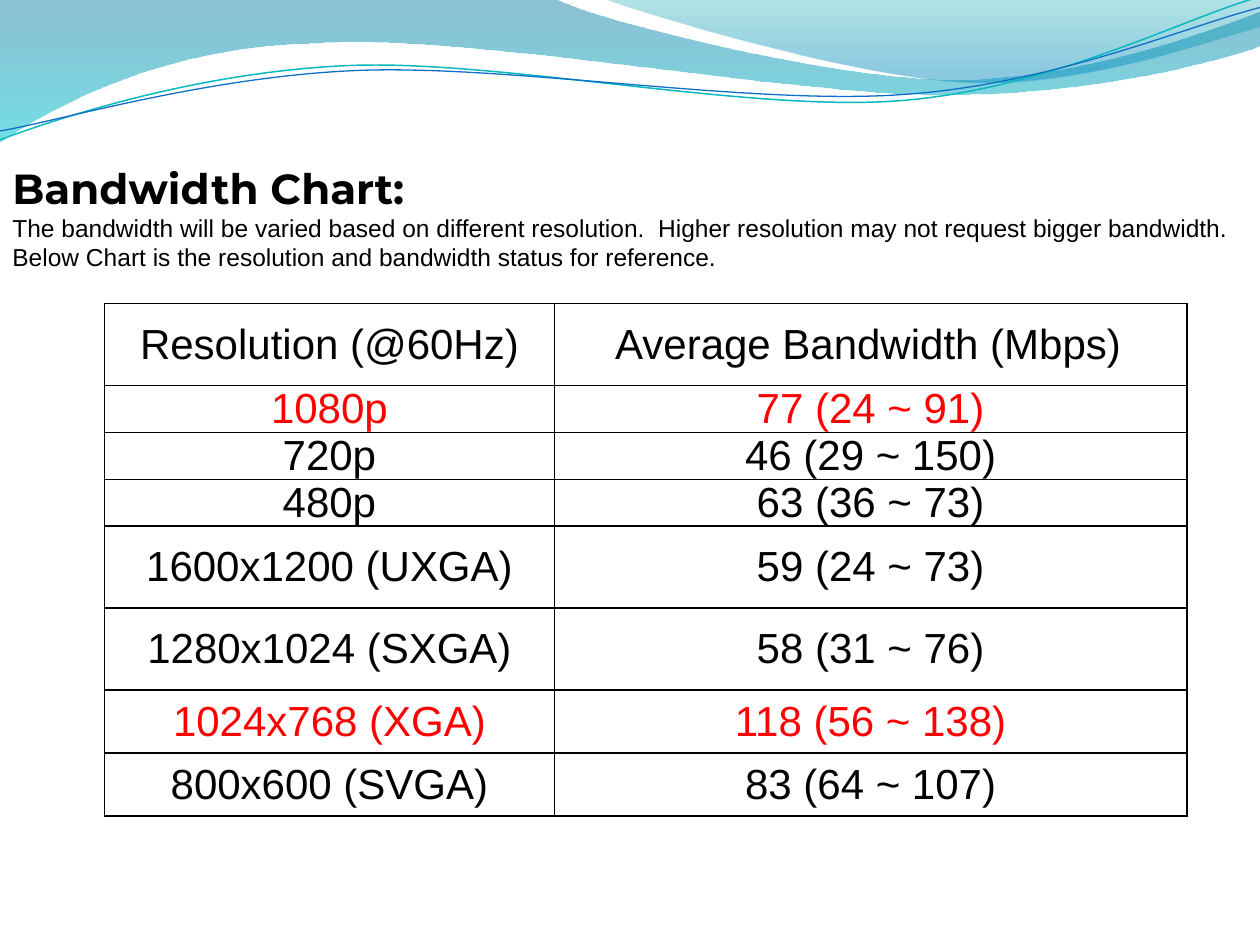
import math

from lxml import etree
from pptx import Presentation
from pptx.dml.color import RGBColor
from pptx.enum import text
from pptx.oxml import ns
from pptx.util import Inches, Pt

BLACK, RED = "000000", "FF0000"

# Each wave: a start point, then steps of one point (line) or three (Bézier curve).
BACK_WAVE = [
    [(0, 0)], [(4.4, -0.01)],
    [(4.76, 0.17), (6.64, 0.63), (7.58, 0.63)],
    [(8.53, 0.63), (9.58, 0.26), (10, 0.09)],
    [(10.01, 0.36)],
    [(9.83, 0.44), (8.7, 0.76), (7.46, 0.75)],
    [(6.22, 0.75), (3.82, 0.28), (2.57, 0.34)],
    [(1.29, 0.36), (0.46, 0.83), (-0.01, 1.13)],
    [(0, 0)],
]
FRONT_WAVE = [
    [(4.79, -0.01)],
    [(5.09, 0.11), (6.82, 0.62), (7.69, 0.65)],
    [(8.56, 0.69), (9.61, 0.32), (10, 0.21)],
    [(10, 0)],
    [(4.79, -0.01)],
]
TEAL_LINE = [
    [(0, 1.11)],
    [(0.48, 0.93), (1.58, 0.57), (2.77, 0.52)],
    [(3.95, 0.47), (5.93, 0.89), (7.13, 0.8)],
    [(8.33, 0.71), (9.38, 0.15), (9.98, -0.02)],
]
BLUE_LINE = [
    [(0, 1.04)],
    [(0.47, 0.96), (1.64, 0.61), (2.83, 0.56)],
    [(4.03, 0.51), (5.97, 0.84), (7.17, 0.75)],
    [(8.36, 0.67), (9.41, 0.21), (10, 0.06)],
]
LINE_TILT = -2.7

COLUMN_WIDTHS = [3.57, 5.02]
# Row height, resolution, bandwidth, colour
BANDWIDTH_ROWS = [
    (0.65, "Resolution (@60Hz)", "Average Bandwidth (Mbps)", BLACK),
    (0.35, "1080p", "77 (24 ~ 91)", RED),
    (0.35, "720p", "46 (29 ~ 150)", BLACK),
    (0.35, "480p", "63 (36 ~ 73)", BLACK),
    (0.65, "1600x1200 (UXGA)", "59 (24 ~ 73)", BLACK),
    (0.65, "1280x1024 (SXGA)", "58 (31 ~ 76)", BLACK),
    (0.5, "1024x768 (XGA)", "118 (56 ~ 138)", RED),
    (0.5, "800x600 (SVGA)", "83 (64 ~ 107)", BLACK),
]


def color(hex_string):
    return RGBColor.from_string(hex_string)


def write(paragraph, wording, size=24, font="Arial", fill=BLACK, bold=False,
          align=text.PP_ALIGN.LEFT, before=0, indent=0):
    paragraph.alignment = align
    paragraph.space_before = Pt(before)
    if indent:
        paragraph._p.get_or_add_pPr().set("marL", str(Inches(indent)))
    run = paragraph.add_run()
    run.text = wording
    run.font.size = Pt(size)
    run.font.name = font
    run.font.bold = bold
    run.font.color.rgb = color(fill)


def turn(point, center, degrees):
    angle = math.radians(degrees)
    x, y = point[0] - center[0], point[1] - center[1]
    return (center[0] + x * math.cos(angle) - y * math.sin(angle),
            center[1] + x * math.sin(angle) + y * math.cos(angle))


def add_outline(slide, left, top, outline, closed):
    """Draw all steps as lines, then join each step of three into one curve."""
    placed = [(Inches(left + x), Inches(top + y)) for step in outline for x, y in step]
    builder = slide.shapes.build_freeform(*placed[0])
    builder.add_line_segments(placed[1:], close=closed)
    shape = builder.convert_to_shape()
    shape.shadow.inherit = False
    lines = iter(list(shape._element.iter(ns.qn("a:lnTo"))))
    for step in outline[1:]:
        segments = [next(lines) for _ in step]
        if len(segments) == 3:
            curve = etree.Element(ns.qn("a:cubicBezTo"))
            segments[0].addprevious(curve)
            for segment in segments:
                curve.append(segment[0])
                segment.getparent().remove(segment)
    return shape


def add_wave(slide, left, top, outline, stops):
    """Add a wave with a downward gradient of (position, colour, opacity %)."""
    shape = add_outline(slide, left, top, outline, closed=True)
    shape.line.fill.background()
    shape.fill.gradient()
    shape.fill.gradient_angle = 270
    for stop, (position, hex_string, _) in zip(shape.fill.gradient_stops, stops):
        stop.position = position
        stop.color.rgb = color(hex_string)
    for element, (_, _, opacity) in zip(shape._element.spPr.iter(ns.qn("a:srgbClr")), stops):
        etree.SubElement(element, ns.qn("a:alpha")).set("val", str(opacity * 1000))


def add_wave_line(slide, left, top, outline, center, hex_string, width):
    """Add a curve that is laid level about its center and tilted as a shape."""
    level = [[turn(point, center, -LINE_TILT) for point in step] for step in outline]
    shape = add_outline(slide, left, top, level, closed=False)
    shape.rotation = LINE_TILT
    shape.fill.background()
    shape.line.color.rgb = color(hex_string)
    shape.line.width = Pt(width)


def add_header_waves(slide, left, top):
    add_wave(slide, left, top, BACK_WAVE, [(0, "0074A1", 45), (1, "00C6CF", 55)])
    add_wave(slide, left, top, FRONT_WAVE, [(0, "00A1A9", 30), (0.8, "008BBF", 45)])
    add_wave_line(slide, left, top, TEAL_LINE, (4.99, 0.57), "0AB8BF", 0.85)
    add_wave_line(slide, left, top, BLUE_LINE, (5, 0.59), "0F6FC6", 0.75)


def add_borders(cell):
    properties = cell._tc.get_or_add_tcPr()
    for index, side in enumerate(("lnL", "lnR", "lnT", "lnB")):
        line = etree.Element(ns.qn(f"a:{side}"), w=str(Pt(1)))
        fill = etree.SubElement(line, ns.qn("a:solidFill"))
        etree.SubElement(fill, ns.qn("a:srgbClr"), val=BLACK)
        properties.insert(index, line)


def add_bandwidth_table(slide, left, top, width, height):
    table = slide.shapes.add_table(
        len(BANDWIDTH_ROWS), len(COLUMN_WIDTHS),
        Inches(left), Inches(top), Inches(width), Inches(height)).table
    table.first_row = table.horz_banding = False
    for column, column_width in zip(table.columns, COLUMN_WIDTHS):
        column.width = Inches(column_width)
    for row_index, (row_height, *wordings, fill) in enumerate(BANDWIDTH_ROWS):
        table.rows[row_index].height = Inches(row_height)
        for column_index, wording in enumerate(wordings):
            cell = table.cell(row_index, column_index)
            cell.fill.background()
            cell.margin_left = Inches(0.02)
            cell.margin_right = Inches(0.08)
            cell.margin_top = cell.margin_bottom = 0
            cell.vertical_anchor = text.MSO_ANCHOR.MIDDLE
            add_borders(cell)
            is_bandwidth_header = row_index == 0 and column_index == 1
            write(cell.text_frame.paragraphs[0], wording, fill=fill,
                  align=text.PP_ALIGN.CENTER,
                  before=4.5 if column_index == 0 else 0,
                  indent=0.02 if is_bandwidth_header else 0.06)


def add_introduction(slide, left, top, width, height):
    box = slide.shapes.add_textbox(Inches(left), Inches(top), Inches(width), Inches(height))
    frame = box.text_frame
    frame.word_wrap = False
    frame.auto_size = text.MSO_AUTO_SIZE.SHAPE_TO_FIT_TEXT
    frame.vertical_anchor = text.MSO_ANCHOR.MIDDLE
    write(frame.paragraphs[0], "Bandwidth Chart:", font="Montserrat", bold=True)
    for sentence in (
        "The bandwidth will be varied based on different resolution.  "
        "Higher resolution may not request bigger bandwidth.",
        "Below Chart is the resolution and bandwidth status for reference.",
    ):
        write(frame.add_paragraph(), sentence, size=14)


def main():
    presentation = Presentation()
    presentation.slide_width = Inches(10)
    presentation.slide_height = Inches(7.5)
    slide = presentation.slides.add_slide(presentation.slide_layouts[6])
    add_header_waves(slide, 0, 0)
    add_bandwidth_table(slide, 0.83, 2.41, 8.59, 4)
    add_introduction(slide, 0, 1.23, 9.94, 0.98)
    presentation.save("out.pptx")


if __name__ == "__main__":
    main()
